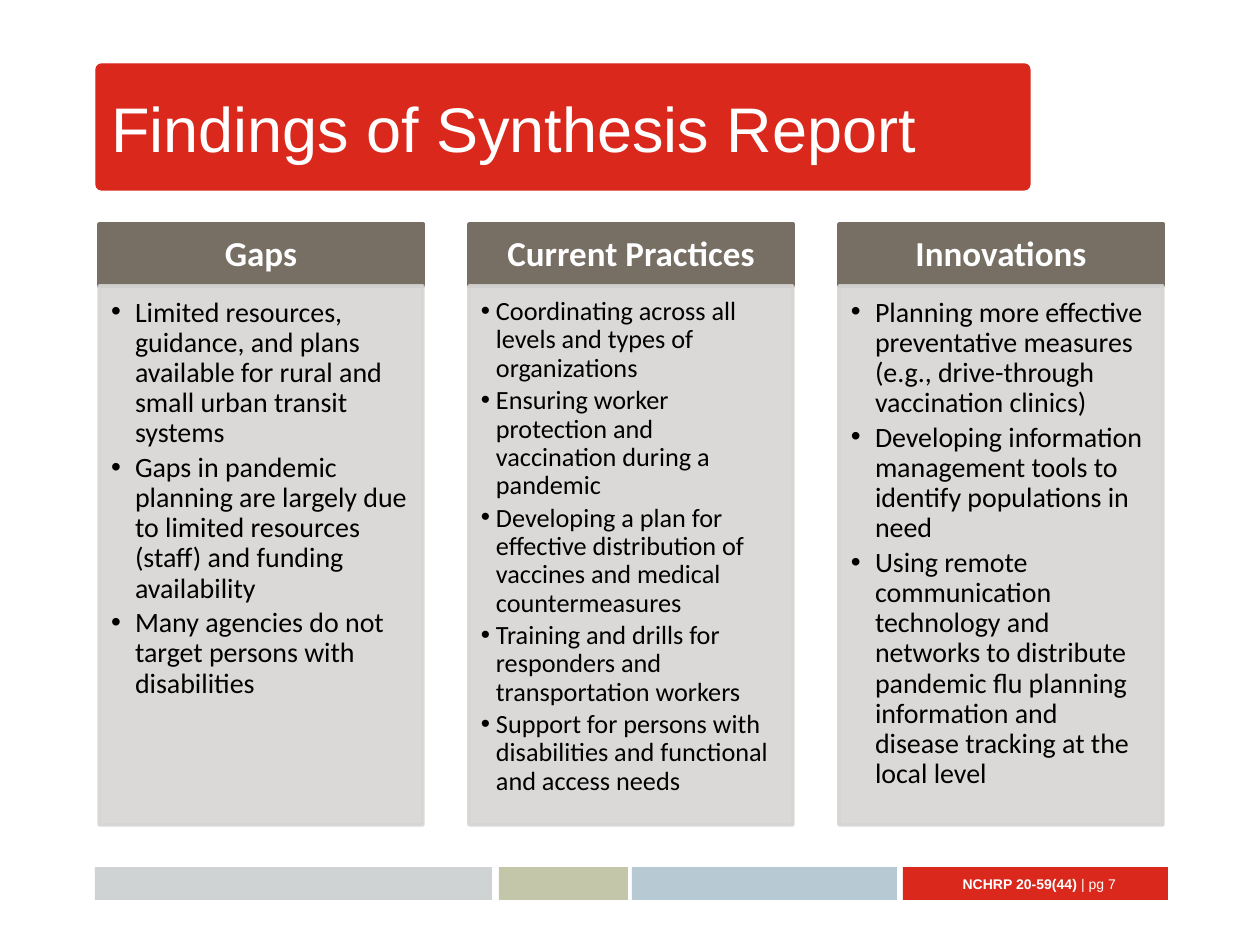
from pptx import Presentation
from pptx.dml.color import RGBColor
from pptx.enum.shapes import MSO_SHAPE as Shape
from pptx.enum.text import MSO_ANCHOR as Anchor, PP_ALIGN as Align
from pptx.oxml.ns import qn
from pptx.util import Pt
from lxml.etree import SubElement

TITLE = "Findings of Synthesis Report"
FOOTER = [("NCHRP 20-59(44) ", True), ("| pg 7", False)]

# Heading, text size in points, bullet indent in px, bullets
COLUMNS = [
    ("Gaps", 16, 24, [
        "Limited resources, guidance, and plans available for rural and small urban transit systems",
        "Gaps in pandemic planning are largely due to limited resources (staff) and funding availability",
        "Many agencies do not target persons with disabilities",
    ]),
    ("Current Practices", 15, 15, [
        "Coordinating across all levels and types of organizations",
        "Ensuring worker protection and vaccination during a pandemic",
        "Developing a plan for effective distribution of vaccines and medical countermeasures",
        "Training and drills for responders and transportation workers",
        "Support for persons with disabilities and functional and access needs",
    ]),
    ("Innovations", 16, 24, [
        "Planning more effective preventative measures (e.g., drive-through vaccination clinics)",
        "Developing information management tools to identify populations in need",
        "Using remote communication technology and networks to distribute pandemic flu planning "
        "information and disease tracking at the local level",
    ]),
]

RED = RGBColor(0xDA, 0x29, 0x1C)
GREY = RGBColor(0xD0, 0xD3, 0xD4)
OLIVE = RGBColor(0xC3, 0xC6, 0xA8)
BLUE = RGBColor(0xB7, 0xC9, 0xD3)
BROWN = RGBColor(0x77, 0x6E, 0x64)
PALE = RGBColor(0xD6, 0xD5, 0xD3)
WHITE = RGBColor(0xFF, 0xFF, 0xFF)
BLACK = RGBColor(0, 0, 0)

# Left, width, colour of each footer bar
BARS = [(95, 397, GREY), (499, 129, OLIVE), (632, 265, BLUE), (903, 265, RED)]
BAR_TOP, BAR_HIGH = 867, 33
COL_LEFT, COL_STEP, COL_WIDE = 99, 370, 324
HEAD_TOP, HEAD_HIGH, BODY_HIGH = 224, 62, 539


def px(n):
    return round(n * 914400 / 126)


def add_box(kind, left, top, wide, high, color, line=None):
    box = slide.shapes.add_shape(kind, px(left), px(top), px(wide), px(high))
    box.shadow.inherit = False
    box.fill.solid()
    box.fill.fore_color.rgb = color
    if line:
        box.line.color.rgb = color
        box.line.width = Pt(line)
    else:
        box.line.fill.background()
    return box


def set_frame(frame, anchor, left, top, right, bottom):
    frame.word_wrap = True
    frame.vertical_anchor = anchor
    frame.margin_left, frame.margin_top = px(left), px(top)
    frame.margin_right, frame.margin_bottom = px(right), px(bottom)


def set_font(font, name, size, color, bold=False):
    font.name, font.size, font.bold = name, Pt(size), bold
    font.color.rgb = color


def add_bullet(para, indent):
    props = para._p.get_or_add_pPr()
    props.set("marL", str(px(indent)))
    props.set("indent", str(-px(indent)))
    SubElement(props, qn("a:buFont")).set("typeface", "Arial")
    SubElement(props, qn("a:buChar")).set("char", "•")


deck = Presentation()
deck.slide_width, deck.slide_height = px(1260), px(945)
slide = deck.slides.add_slide(deck.slide_layouts[5])

# Title on its banner
banner = add_box(Shape.ROUNDED_RECTANGLE, 96, 64, 934, 126, RED, 0.75)
banner.adjustments[0] = 0.045
title = slide.shapes.title
title.left, title.top, title.width, title.height = px(98), px(64), px(930), px(127)
title.text_frame.text = TITLE
set_frame(title.text_frame, Anchor.MIDDLE, 13, 6, 13, 6)
head = title.text_frame.paragraphs[0]
head.alignment = Align.LEFT
set_font(head.runs[0].font, "Arial", 36, WHITE)
banner.element.addnext(title.element)

# Footer bars and page label
for left, wide, color in BARS:
    add_box(Shape.RECTANGLE, left, BAR_TOP, wide, BAR_HIGH, color)
label = slide.shapes.add_textbox(px(835), px(859), px(294), px(50))
set_frame(label.text_frame, Anchor.MIDDLE, 13, 6, 13, 6)
para = label.text_frame.paragraphs[0]
para.alignment = Align.RIGHT
for text, bold in FOOTER:
    run = para.add_run()
    run.text = text
    set_font(run.font, "Arial", 8, WHITE, bold)

# Columns: a heading over a bulleted panel
for i, (name, size, indent, items) in enumerate(COLUMNS):
    left = COL_LEFT + i * COL_STEP
    top = add_box(Shape.RECTANGLE, left, HEAD_TOP, COL_WIDE, HEAD_HIGH, BROWN, 2)
    top.text_frame.text = name
    set_frame(top.text_frame, Anchor.MIDDLE, 20, 11, 20, 11)
    para = top.text_frame.paragraphs[0]
    para.alignment = Align.CENTER
    para.line_spacing = 0.9
    set_font(para.runs[0].font, "Calibri", 20, WHITE, True)

    body = add_box(Shape.RECTANGLE, left, HEAD_TOP + HEAD_HIGH, COL_WIDE, BODY_HIGH, PALE, 2)
    for tint in body.element.spPr.iter(qn("a:srgbClr")):
        SubElement(tint, qn("a:alpha")).set("val", "90000")
    frame = body.text_frame
    frame.text = "\n".join(items)
    set_frame(frame, Anchor.TOP, 12, 12, 15, 17)
    for para in frame.paragraphs:
        para.alignment = Align.LEFT
        para.line_spacing = 0.9
        para.space_after = Pt(size * 0.15)
        add_bullet(para, indent)
        set_font(para.runs[0].font, "Calibri", size, BLACK)

deck.save("out.pptx")
